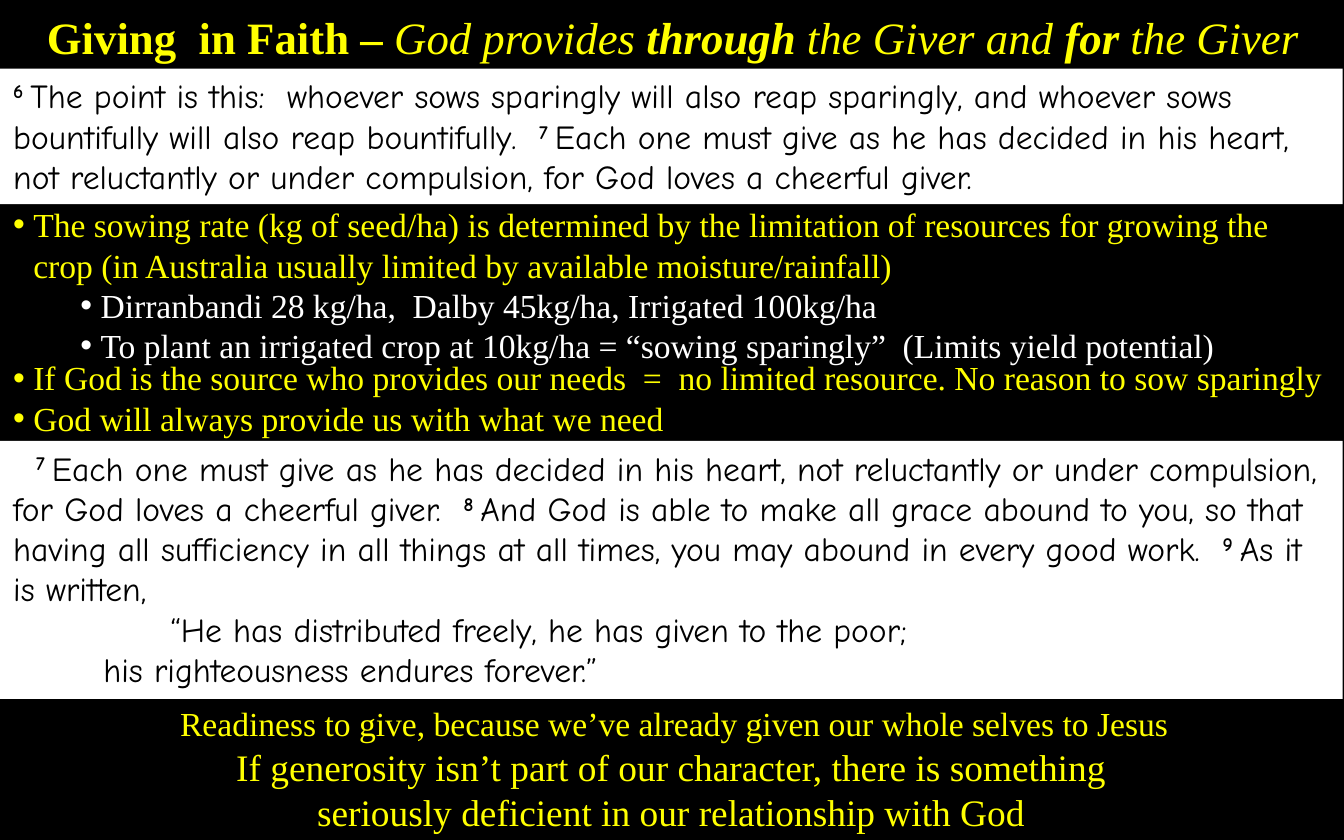
from lxml.etree import SubElement
from pptx import Presentation
from pptx.dml.color import RGBColor
from pptx.enum.shapes import MSO_SHAPE
from pptx.enum.text import MSO_ANCHOR, MSO_AUTO_SIZE, PP_ALIGN
from pptx.oxml.ns import qn
from pptx.util import Inches, Pt

THEME = {
    "background": RGBColor(0, 0, 0),
    "panel": RGBColor(255, 255, 255),
    "note": RGBColor(255, 255, 0),
    "detail": RGBColor(255, 255, 255),
    "verse": RGBColor(0, 0, 0),
    "note_font": "Times New Roman",
    "verse_font": "Comic Neue",
    "title_size": 24,
    "body_size": 18,
    "closing_size": 20,
}

# A paragraph is (kind, spans); a span is (text, marks): b bold, i italic, ^ raised.
TITLE = [("centre", [
    ("Giving  in Faith – ", "b"), ("God provides ", "i"), ("through", "bi"),
    (" the Giver and ", "i"), ("for", "bi"), (" the Giver", "i"),
])]
SOWING = [
    ("point", [("The sowing rate (kg of seed/ha) is determined by the limitation of resources "
                "for growing the crop (in Australia usually limited by available "
                "moisture/rainfall)", "")]),
    ("detail", [("Dirranbandi 28 kg/ha,  Dalby 45kg/ha, Irrigated 100kg/ha", "")]),
    ("detail", [("To plant an irrigated crop at 10kg/ha = “sowing sparingly”  "
                 "(Limits yield potential)", "")]),
]
FIRST_PASSAGE = [("verse", [
    ("6 ", "b^"),
    ("The point is this:  whoever sows sparingly will also reap sparingly, and whoever "
     "sows bountifully will also reap bountifully.  ", ""),
    ("7 ", "b^"),
    ("Each one must give as he has decided in his heart, not reluctantly or under "
     "compulsion, for God loves a cheerful giver.", ""),
])]
SOURCE = [
    ("point", [("If God is the source who provides our needs  =  no limited resource. "
                "No reason to sow sparingly", "")]),
    ("point", [("God will always provide us with what we need", "")]),
]
SECOND_PASSAGE = [
    ("opening", [
        ("7 ", "b^"),
        ("Each one must give as he has decided in his heart, not reluctantly or under "
         "compulsion, for God loves a cheerful giver.  ", ""),
        ("8 ", "b^"),
        ("And God is able to make all grace abound to you, so that having all sufficiency "
         "in all things at all times, you may abound in every good work.  ", ""),
        ("9 ", "b^"),
        ("As it is written,", ""),
    ]),
    ("quote", [("\t\t“He has distributed freely, he has given to the poor;", "")]),
    ("quote_end", [("his righteousness endures forever.”", "")]),
]
READINESS = [("centre", [
    ("Readiness to give, because we’ve already given our whole selves to Jesus", "")])]
CLOSING = [("centre", [
    ("If generosity isn’t part of our character, there is something seriously deficient "
     "in our relationship with God", "")])]

# role, (left, top, width, height), size, paragraphs; from back to front
BLOCKS = [
    ("note", (0.02, 0.02, 9.97, 0.5), "title_size", TITLE),
    ("note", (0, 1.47, 10, 1.31), "body_size", SOWING),
    ("verse", (0, 0.51, 9.99, 1.01), "body_size", FIRST_PASSAGE),
    ("note", (0, 2.61, 10, 0.71), "body_size", SOURCE),
    ("verse", (0, 3.28, 9.99, 1.92), "body_size", SECOND_PASSAGE),
    ("note", (0.02, 5.18, 10, 0.4), "body_size", READINESS),
    ("note", (1.57, 5.49, 6.85, 0.77), "closing_size", CLOSING),
]
# left margin and first-line indent of each paragraph kind
INDENTS = {
    "point": (0.15, -0.15), "detail": (0.65, -0.15), "opening": (0, 0.17),
    "quote": (0.67, -0.67), "quote_end": (0.67, 0),
}
QUOTE_TABS = [(0.14, "r"), (0.28, "l")]


def set_layout(paragraph, kind):
    """Set alignment, indents, bullet and tab stops for a paragraph kind."""
    if kind == "centre":
        paragraph.alignment = PP_ALIGN.CENTER
        return
    paragraph.alignment = PP_ALIGN.LEFT
    if kind == "detail":
        paragraph.level = 1
    properties = paragraph._p.get_or_add_pPr()
    margin, indent = INDENTS.get(kind, (0, 0))
    properties.set("marL", str(Inches(margin)))
    properties.set("indent", str(Inches(indent)))
    if kind in ("point", "detail"):
        SubElement(properties, qn("a:buFont"), typeface="Arial")
        SubElement(properties, qn("a:buChar"), char="•")
    if kind == "quote":
        tabs = SubElement(properties, qn("a:tabLst"))
        for position, side in QUOTE_TABS:
            SubElement(tabs, qn("a:tab"), pos=str(Inches(position)), algn=side)


def add_span(paragraph, text, marks, role, size, colour):
    span = paragraph.add_run()
    span.text = text
    span.font.name = THEME[role + "_font"]
    span.font.size = Pt(THEME[size])
    span.font.color.rgb = THEME[colour]
    span.font.bold = "b" in marks
    span.font.italic = "i" in marks
    if "^" in marks:
        span.font._element.set("baseline", "30000")


def add_block(page, role, area, size, paragraphs):
    area = [Inches(length) for length in area]
    if role == "verse":
        box = page.shapes.add_shape(MSO_SHAPE.RECTANGLE, *area)
        box.shadow.inherit = False
        box.fill.solid()
        box.fill.fore_color.rgb = THEME["panel"]
        box.line.fill.background()
    else:
        box = page.shapes.add_textbox(*area)
    frame = box.text_frame
    frame.word_wrap = True
    frame.vertical_anchor = MSO_ANCHOR.TOP
    frame.auto_size = MSO_AUTO_SIZE.SHAPE_TO_FIT_TEXT
    for index, (kind, spans) in enumerate(paragraphs):
        paragraph = frame.add_paragraph() if index else frame.paragraphs[0]
        set_layout(paragraph, kind)
        colour = "detail" if kind == "detail" else role
        for text, marks in spans:
            add_span(paragraph, text, marks, role, size, colour)


def main():
    deck = Presentation()
    deck.slide_width, deck.slide_height = Inches(10), Inches(6.25)
    page = deck.slides.add_slide(deck.slide_layouts[6])
    page.background.fill.solid()
    page.background.fill.fore_color.rgb = THEME["background"]
    for block in BLOCKS:
        add_block(page, *block)
    deck.save("out.pptx")


if __name__ == "__main__":
    main()
